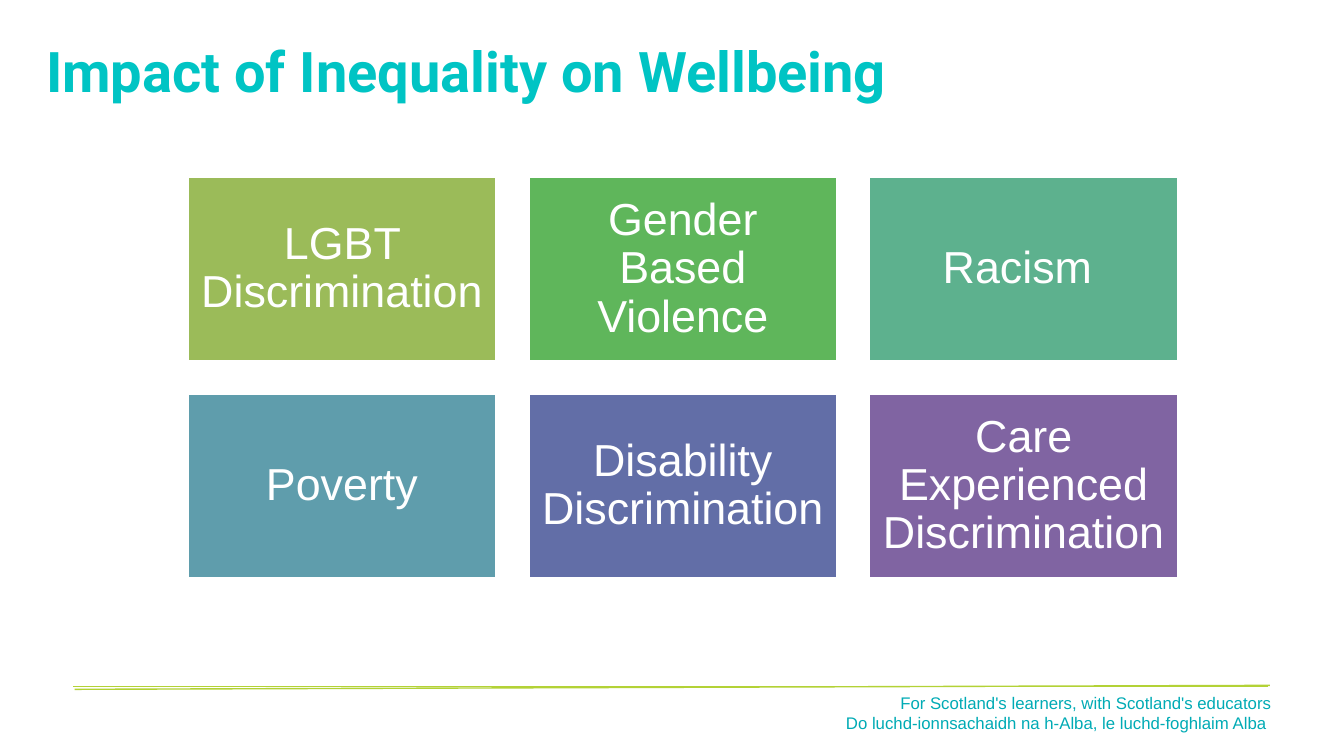
"""Build the slide on the impact of inequality on wellbeing."""
from lxml.etree import SubElement
from pptx import Presentation
from pptx.dml.color import RGBColor
from pptx.enum.shapes import MSO_CONNECTOR, MSO_SHAPE
from pptx.enum.text import MSO_ANCHOR, PP_ALIGN
from pptx.oxml.ns import qn
from pptx.util import Cm, Pt

INEQUALITIES = [
    ("LGBT Discrimination", "9BBB59"),
    ("Gender Based Violence", "5FB65B"),
    ("Racism ", "5DB18E"),
    ("Poverty", "5F9DAC"),
    ("Disability Discrimination", "626EA7"),
    ("Care Experienced Discrimination", "8064A2"),
]
FOOTER = [
    "For Scotland's learners, with Scotland's educators",
    "Do luchd-ionnsachaidh na h-Alba, le luchd-foghlaim Alba ",
]
COLUMNS = 3


def set_color(color_format, color):
    color_format.rgb = RGBColor.from_string(color)


def write_text(shape, lines, size, color, font="Arial", bold=False,
               align=PP_ALIGN.LEFT, anchor=MSO_ANCHOR.TOP, inset=(0.25, 0.13),
               line_spacing=1.0):
    frame = shape.text_frame
    frame.word_wrap = True
    frame.vertical_anchor = anchor
    frame.margin_left = frame.margin_right = Cm(inset[0])
    frame.margin_top = frame.margin_bottom = Cm(inset[1])
    frame.text = "\n".join(lines)
    for paragraph in frame.paragraphs:
        paragraph.alignment = align
        paragraph.line_spacing = line_spacing
        paragraph.space_before = Pt(0)
        for run in paragraph.runs:
            run.font.name = font
            run.font.size = Pt(size)
            run.font.bold = bold
            set_color(run.font.color, color)


def add_title(slide, text):
    title = slide.shapes.title
    title.left, title.top, title.width, title.height = (
        Cm(0.91), Cm(0.79), Cm(26.9), Cm(1.96))
    write_text(title, [text], 40, "00C4C4", font="Roboto", bold=True)


def add_tile(slide, left, top, text, color):
    tile = slide.shapes.add_shape(
        MSO_SHAPE.RECTANGLE, Cm(left), Cm(top), Cm(7.8), Cm(4.67))
    tile.shadow.inherit = False
    tile.fill.solid()
    set_color(tile.fill.fore_color, color)
    set_color(tile.line.color, "FFFFFF")
    tile.line.width = Pt(2)
    write_text(tile, [text], 32, "FFFFFF", align=PP_ALIGN.CENTER,
               anchor=MSO_ANCHOR.MIDDLE, inset=(0.33, 0.33), line_spacing=0.9)


def add_rule(slide, start, end, width):
    rule = slide.shapes.add_connector(
        MSO_CONNECTOR.STRAIGHT, *map(Cm, start + end))
    set_color(rule.line.color, "B3D236")
    rule.line.width = Pt(width)
    SubElement(rule._element.spPr, qn("a:effectLst"))


def add_footer(slide):
    add_rule(slide, (1.88, 17.37), (32, 17.27), 1)
    add_rule(slide, (1.85, 17.3), (31.95, 17.3), 0.75)
    footer = slide.shapes.add_textbox(Cm(20.9), Cm(17.32), Cm(11.4), Cm(1.27))
    write_text(footer, FOOTER, 12, "00ABB5", align=PP_ALIGN.RIGHT)


def main():
    presentation = Presentation()
    presentation.slide_width, presentation.slide_height = Cm(33.87), Cm(19.05)
    slide = presentation.slides.add_slide(presentation.slide_layouts[5])
    add_footer(slide)
    add_title(slide, "Impact of Inequality on Wellbeing")
    for index, (text, color) in enumerate(INEQUALITIES):
        row, column = divmod(index, COLUMNS)
        add_tile(slide, 4.72 + column * 8.59, 4.45 + row * 5.46, text, color)
    presentation.save("out.pptx")


if __name__ == "__main__":
    main()
